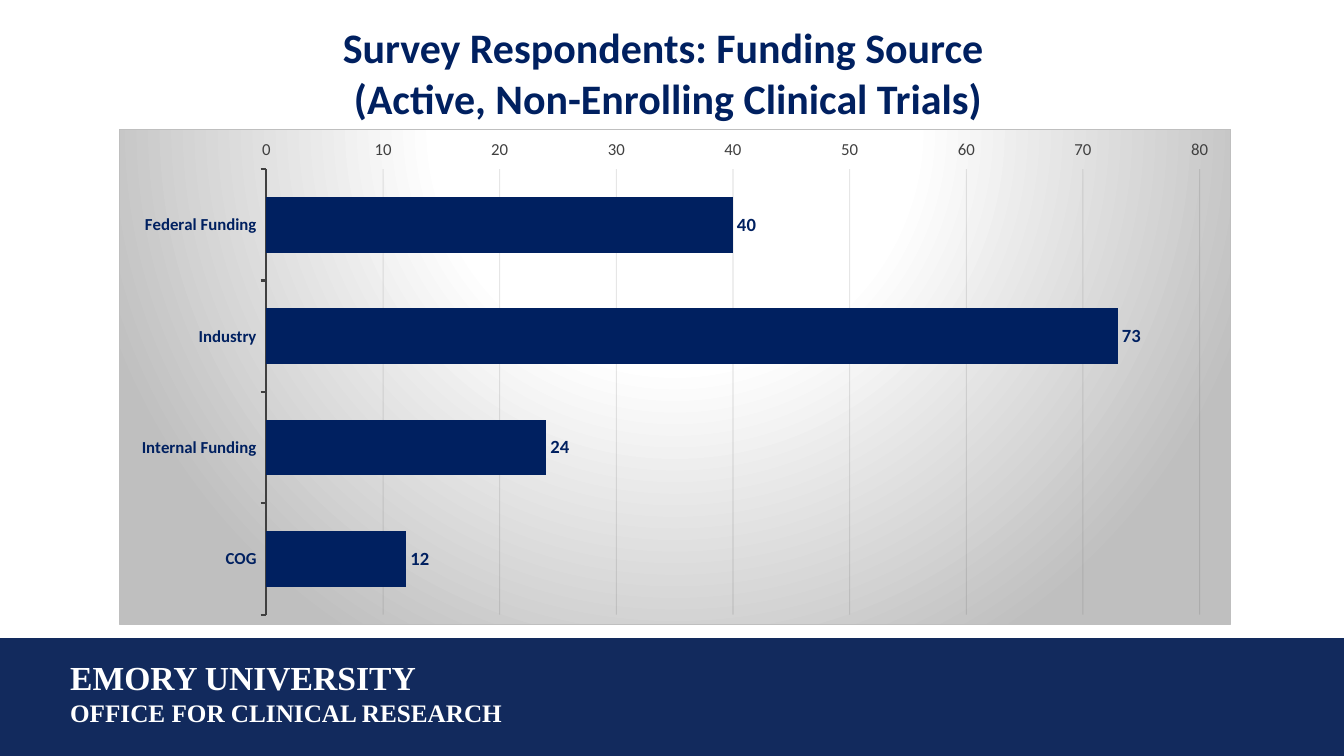
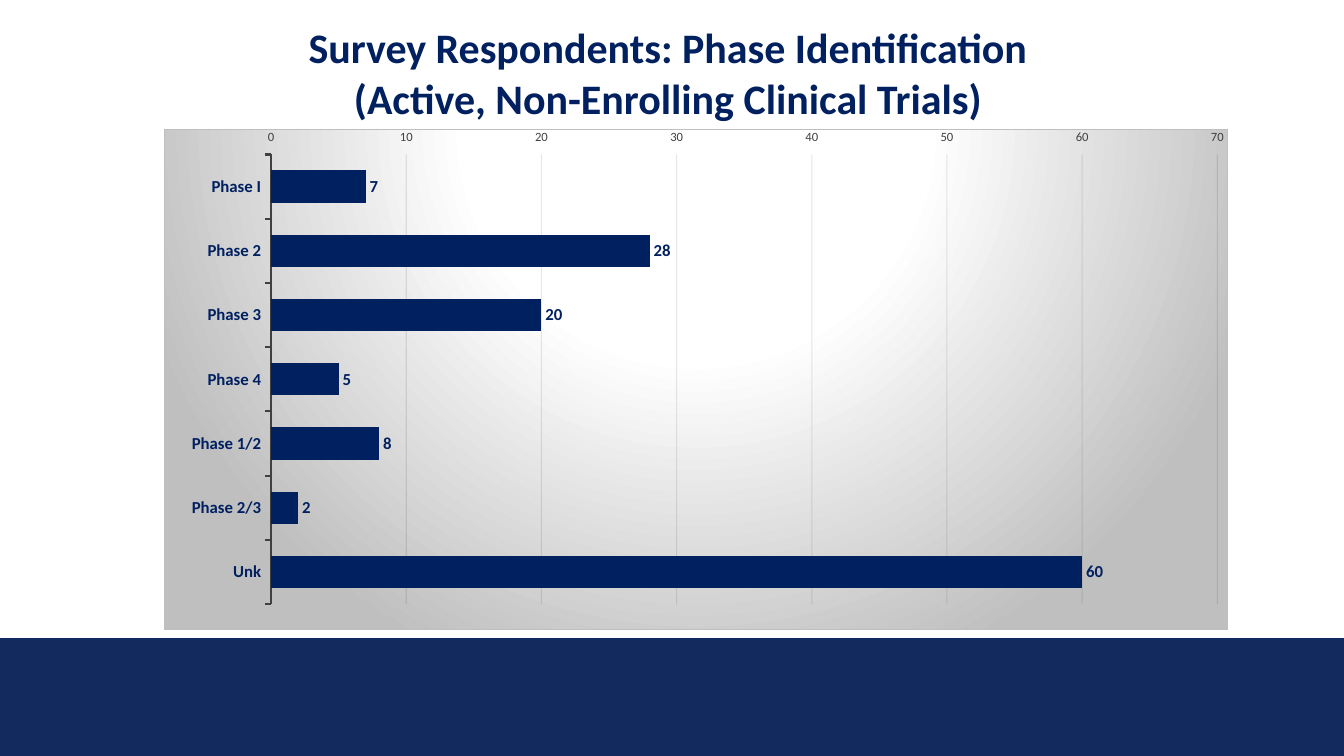
from lxml import etree
from pptx import Presentation
from pptx.chart.data import CategoryChartData
from pptx.dml.color import RGBColor
from pptx.enum.chart import XL_CHART_TYPE as ChartType, XL_LABEL_POSITION as LabelPos
from pptx.enum.chart import XL_TICK_MARK as Tick
from pptx.enum.shapes import MSO_SHAPE as Shape
from pptx.enum.text import PP_ALIGN as Align
from pptx.oxml import parse_xml
from pptx.oxml.ns import nsdecls, qn
from pptx.util import Cm, Pt

COLORS = {
    "band": "122A5D",
    "navy": "002060",
    "white": "FFFFFF",
    "axis": "404040",
    "grid": "0D0D0D",
    "silver": "BFBFBF",
    "black": "000000",
}
SANS, SERIF = "Calibri", "Times New Roman"
WIDTH, HEIGHT = 33.87, 19.05
BAND_TOP = 16.08
SUBTITLE = "(Active, Non-Enrolling Clinical Trials)"


def rgb(name):
    return RGBColor.from_string(COLORS[name])


def style(font, size, color, bold=False, face=SANS):
    font.size, font.bold, font.name = Pt(size), bold, face
    font.color.rgb = rgb(color)


class Deck:
    def __init__(self):
        self.prs = Presentation()
        self.prs.slide_width, self.prs.slide_height = Cm(WIDTH), Cm(HEIGHT)
        self.s = None

    def slide(self, title):
        """Start a slide with the footer band and a two-line title."""
        self.s = self.prs.slides.add_slide(self.prs.slide_layouts[6])
        self.band()
        self.text((4.14, 0.43, 25.4, 2.82), [(title, 30), (SUBTITLE, 30)],
                  "navy", SANS, Align.CENTER)

    def band(self):
        sp = self.s.shapes.add_shape(Shape.RECTANGLE, 0, Cm(BAND_TOP),
                                     Cm(WIDTH), Cm(HEIGHT - BAND_TOP))
        sp.shadow.inherit = False
        sp.fill.solid()
        sp.fill.fore_color.rgb = rgb("band")
        sp.line.fill.background()

    def text(self, box, lines, color, face, align=Align.LEFT):
        tf = self.s.shapes.add_textbox(*map(Cm, box)).text_frame
        tf.word_wrap = True
        for i, (line, size) in enumerate(lines):
            p = tf.paragraphs[0] if i == 0 else tf.add_paragraph()
            p.alignment = align
            r = p.add_run()
            r.text = line
            style(r.font, size, color, True, face)

    def bar_chart(self, box, counts, scale_size, label_size, plot=None):
        data = CategoryChartData()
        data.categories = list(counts)
        data.add_series("Series 1", list(counts.values()))
        chart = self.s.shapes.add_chart(ChartType.BAR_CLUSTERED,
                                        *map(Cm, box), data).chart
        chart.has_title = chart.has_legend = False
        style(chart.font, 10, "black")
        self.bars(chart.plots[0], label_size)
        self.axes(chart, scale_size)
        self.backdrop(chart)
        if plot:
            self.plot_area(chart, plot)

    def bars(self, plot, label_size):
        plot.gap_width = 100
        plot.vary_by_categories = False
        fill = plot.series[0].format.fill
        fill.solid()
        fill.fore_color.rgb = rgb("navy")
        plot.has_data_labels = True
        labels = plot.data_labels
        labels.show_value = True
        labels.position = LabelPos.OUTSIDE_END
        style(labels.font, label_size, "navy", True)

    def axes(self, chart, scale_size):
        cat, val = chart.category_axis, chart.value_axis
        cat.reverse_order = True
        cat.major_tick_mark = val.major_tick_mark = Tick.OUTSIDE
        cat.format.line.color.rgb = rgb("axis")
        cat.format.line.width = Pt(1.5)
        style(cat.tick_labels.font, 12, "navy", True)
        style(val.tick_labels.font, scale_size, "axis")
        val.format.line.fill.background()
        grid = val.major_gridlines.format.line
        grid.color.rgb = rgb("grid")
        grid.width = Pt(0.75)
        for color in val.major_gridlines._xAx.iterfind(
                f"{qn('c:majorGridlines')}//{qn('a:srgbClr')}"):
            etree.SubElement(color, qn("a:alpha"), val="10000")

    def backdrop(self, chart):
        """Fill the chart with a radial gradient and outline it."""
        stops = "".join(
            f'<a:gs pos="{at * 1000}"><a:srgbClr val="{COLORS[c]}"/></a:gs>'
            for at, c in ((0, "white"), (39, "white"), (100, "silver")))
        root = chart._chartSpace
        root.find(qn("c:chart")).addnext(parse_xml(
            f'<c:spPr {nsdecls("c", "a")}><a:gradFill><a:gsLst>{stops}</a:gsLst>'
            '<a:path path="circle"><a:fillToRect l="50000" t="-80000" '
            'r="50000" b="180000"/></a:path></a:gradFill>'
            f'<a:ln w="{Pt(0.75)}"><a:solidFill><a:srgbClr '
            f'val="{COLORS["silver"]}"/></a:solidFill></a:ln></c:spPr>'))

    def plot_area(self, chart, plot):
        """Place the inner plot area by fractions of the chart."""
        area = chart._chartSpace.find(f".//{qn('c:plotArea')}")
        for old in area.findall(qn("c:layout")):
            area.remove(old)
        sizes = "".join(f'<c:{k} val="{v}"/>' for k, v in zip("xywh", plot))
        area.insert(0, parse_xml(
            f'<c:layout {nsdecls("c")}><c:manualLayout>'
            '<c:layoutTarget val="inner"/><c:xMode val="edge"/>'
            f'<c:yMode val="edge"/>{sizes}</c:manualLayout></c:layout>'))


def main():
    deck = Deck()

    deck.slide("Survey Respondents: Funding Source ")
    deck.bar_chart((3, 3.25, 28.02, 12.5),
                   {"Federal Funding": 40, "Industry": 73,
                    "Internal Funding": 24, "COG": 12}, 12, 13.3)
    deck.text((1.52, 16.43, 16.94, 2.06),
              [("EMORY UNIVERSITY", 24), ("OFFICE FOR CLINICAL RESEARCH", 18)],
              "white", SERIF)

    deck.slide("Survey Respondents: Phase Identification")
    deck.bar_chart((4.14, 3.25, 26.82, 12.62),
                   {"Phase I": 7, "Phase 2": 28, "Phase 3": 20, "Phase 4": 5,
                    "Phase 1/2": 8, "Phase 2/3": 2, "Unk": 60}, 9, 12,
                   plot=(0.1, 0.05, 0.89, 0.9))

    deck.prs.save("out.pptx")


if __name__ == "__main__":
    main()
